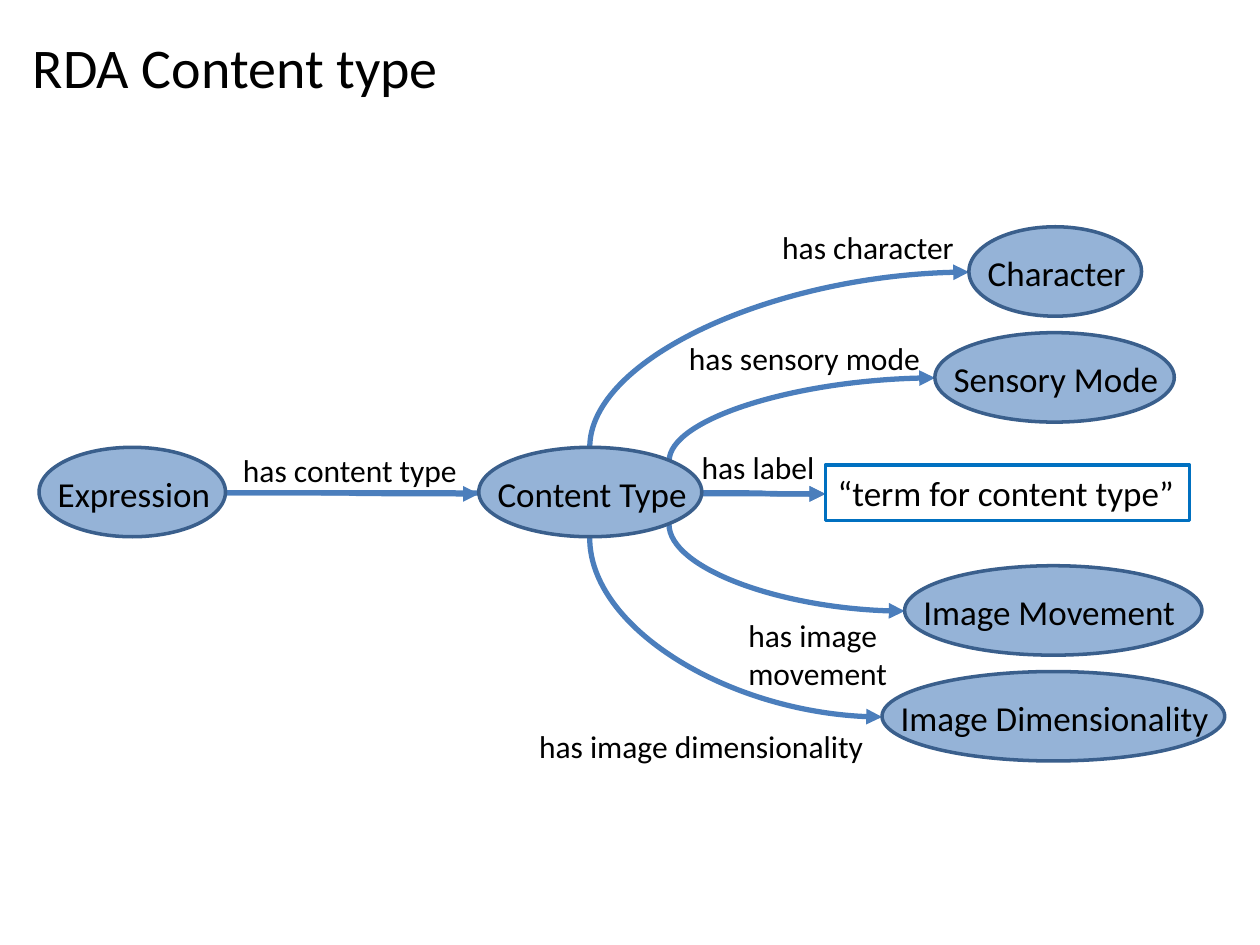
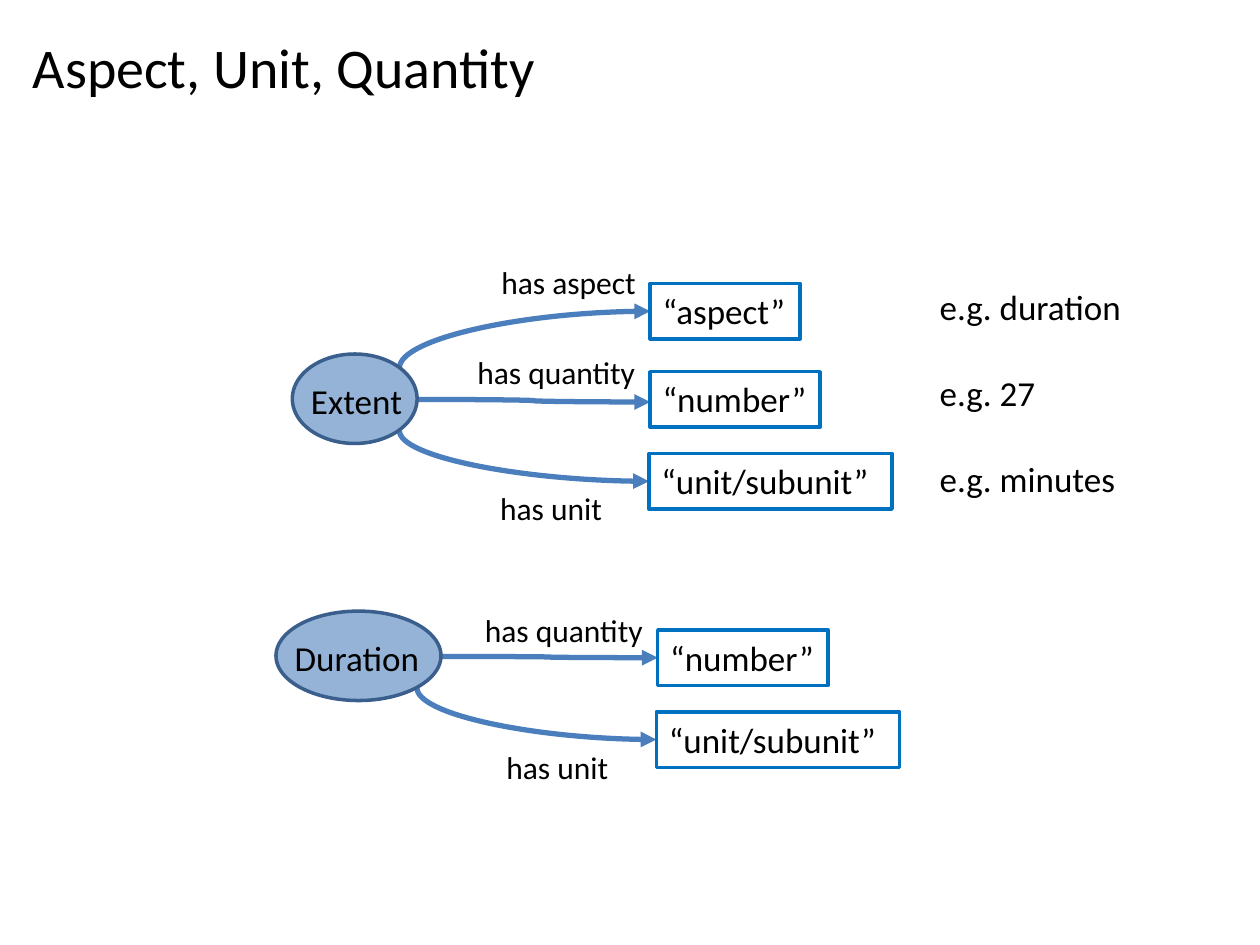
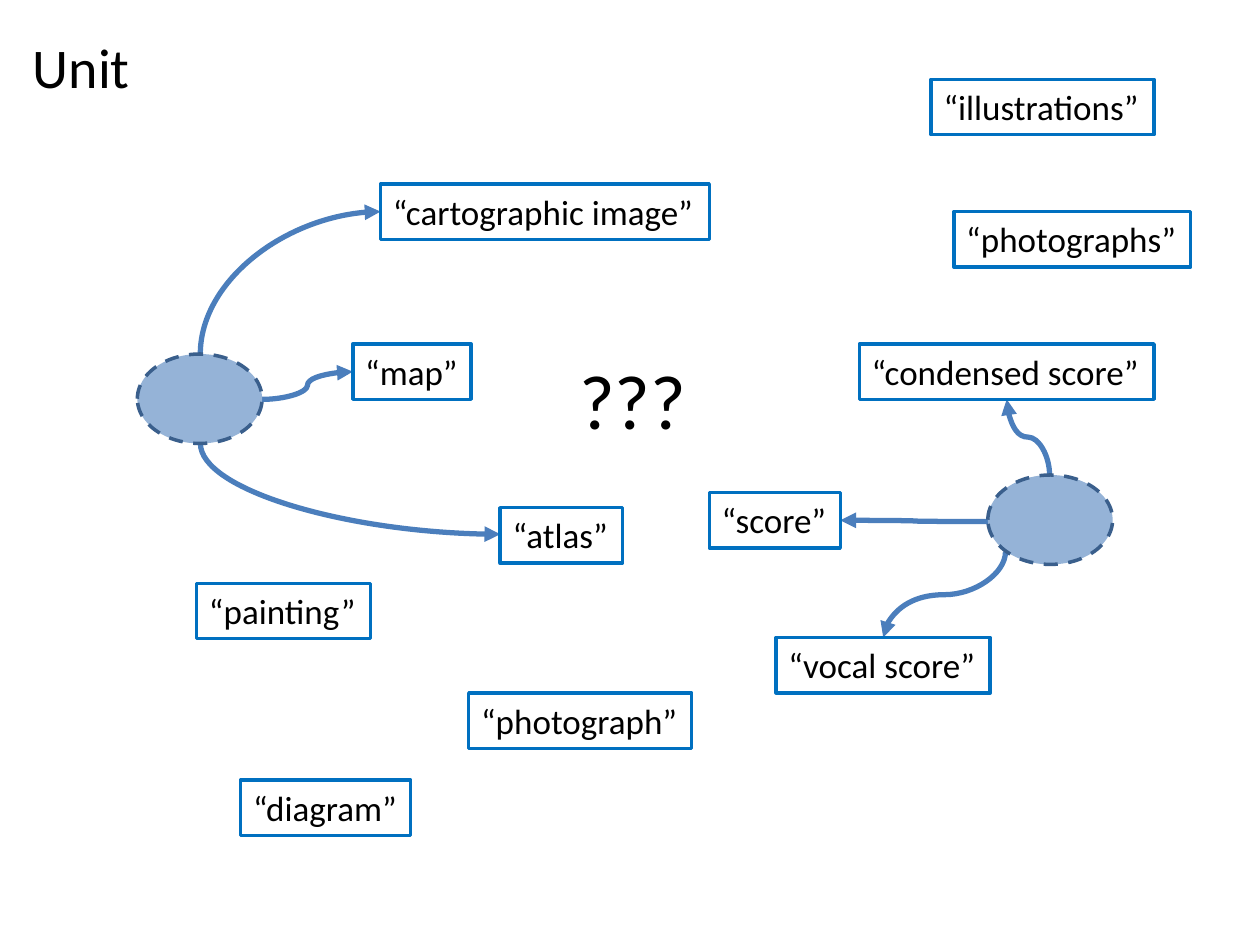
"""Build three slides of entity diagrams on content type, extent and unit."""
import math

import pptx
import pptx.dml.color
import pptx.enum.dml
import pptx.enum.shapes
import pptx.enum.text
import pptx.oxml.ns
import pptx.oxml.xmlchemy
import pptx.util

Inches = pptx.util.Inches
Pt = pptx.util.Pt
qn = pptx.oxml.ns.qn
new_element = pptx.oxml.xmlchemy.OxmlElement
color = pptx.dml.color.RGBColor.from_string

FONT = "Calibri"
BLACK, WHITE = "000000", "FFFFFF"
ELLIPSE_FILL, ELLIPSE_LINE = "95B3D7", "3A5F8C"
TERM_LINE, ARROW_LINE = "0070C0", "4B7EBC"
ELLIPSE_HEIGHT = 0.71
TEXT_HEIGHTS = {18: 0.4, 20: 0.44, 32: 0.64, 44: 0.84}
EXTRA_LINE = 0.31


def set_text(box, text, left, top, width, size):
    """Place a box and fill it with left-aligned, unwrapped text."""
    height = TEXT_HEIGHTS[size] + EXTRA_LINE * text.count("\n")
    box.left, box.top = Inches(left), Inches(top)
    box.width, box.height = Inches(width), Inches(height)
    frame = box.text_frame
    frame.text = text
    frame.word_wrap = False
    frame.auto_size = pptx.enum.text.MSO_AUTO_SIZE.SHAPE_TO_FIT_TEXT
    frame.vertical_anchor = pptx.enum.text.MSO_ANCHOR.TOP
    for para in frame.paragraphs:
        para.alignment = pptx.enum.text.PP_ALIGN.LEFT
        para.font.name = FONT
        para.font.size = Pt(size)
        para.font.color.rgb = color(BLACK)


def add_arrow(page, route, start_x, start_y, end_x, end_y):
    """Draw a curve that leaves sideways (flat) or vertically (upright, bend)."""
    begin, end = (start_x, start_y), (end_x, end_y)
    across, down = end_x - start_x, end_y - start_y
    if route != "flat":
        center_x, center_y = (start_x + end_x) / 2, (start_y + end_y) / 2
        offset_x = math.copysign(down / 2, across)
        offset_y = -math.copysign(across / 2, down)
        begin = (center_x + offset_x, center_y + offset_y)
        end = (center_x - offset_x, center_y - offset_y)
    arrow = page.shapes.add_connector(
        pptx.enum.shapes.MSO_CONNECTOR.CURVE, *map(Inches, begin + end))
    arrow.line.color.rgb = color(ARROW_LINE)
    arrow.line.width = Pt(3)
    properties = arrow._element.spPr
    if route != "flat":
        turn = 270 if across * down > 0 else 90
        properties.find(qn("a:xfrm")).set("rot", str(turn * 60000))
    if route == "bend":
        properties.find(qn("a:prstGeom")).set("prst", "curvedConnector2")
    head = new_element("a:tailEnd")
    head.set("type", "triangle")
    properties.find(qn("a:ln")).append(head)
    properties.append(new_element("a:effectLst"))


slides = [
    {
        "title": ("RDA Content type", 3.45),
        "arrows": [
            ("flat", 1.79, 3.91, 6.55, 3.92),
            ("flat", 1.79, 3.91, 3.8, 3.92),
            ("bend", 5.31, 4.16, 7.18, 4.85),
            ("bend", 4.68, 4.27, 7, 5.69),
            ("bend", 5.31, 3.66, 7.42, 3),
            ("bend", 4.68, 3.55, 7.69, 2.16),
            ("flat", 5.57, 3.91, 6.55, 3.92),
        ],
        "entities": [
            ("Expression", 0.31, 3.55, 1.48, 1.42),
            ("Content Type", 3.8, 3.55, 1.77, 1.71),
            ("Image Dimensionality", 7, 5.33, 2.72, 2.67),
            ("Sensory Mode", 7.42, 2.64, 1.9, 1.84),
            ("Character", 7.69, 1.8, 1.37, 1.31),
            ("Image Movement", 7.18, 4.49, 2.36, 2.22),
        ],
        "terms": [("“term for content type”", 6.55, 3.69, 2.89)],
        "labels": [
            ("has content type", 1.83, 3.53, 1.92, 18),
            ("has character", 6.11, 1.76, 1.58, 18),
            ("has sensory mode", 5.37, 2.64, 2.06, 18),
            ("has image dimensionality", 4.18, 5.72, 2.8, 18),
            ("has image\nmovement", 5.84, 4.84, 1.32, 18),
            ("has label", 5.47, 3.51, 1.11, 18),
        ],
    },
    {
        "title": ("Aspect, Unit, Quantity", 4.24),
        "arrows": [
            ("flat", 3.31, 3.17, 5.16, 3.19),
            ("bend", 3.17, 3.42, 5.15, 3.82),
            ("flat", 3.5, 5.21, 5.22, 5.22),
            ("bend", 3.31, 5.46, 5.21, 5.87),
            ("bend", 3.17, 2.92, 5.16, 2.47),
        ],
        "entities": [
            ("Extent", 2.32, 2.81, 0.99, 0.93),
            ("Duration", 2.19, 4.85, 1.31, 1.2),
        ],
        "terms": [
            ("“number”", 5.16, 2.95, 1.35),
            ("“unit/subunit”", 5.15, 3.6, 1.93),
            ("“number”", 5.22, 5, 1.35),
            ("“unit/subunit”", 5.21, 5.65, 1.93),
            ("“aspect”", 5.16, 2.25, 1.19),
        ],
        "labels": [
            ("has unit", 3.87, 3.83, 1.02, 18),
            ("has quantity", 3.69, 2.75, 1.47, 18),
            ("has unit", 3.92, 5.89, 1.02, 18),
            ("has quantity", 3.75, 4.8, 1.47, 18),
            ("has aspect", 3.88, 2.04, 1.28, 18),
            ("e.g. duration", 7.36, 2.22, 1.65, 20),
            ("e.g. 27", 7.36, 2.9, 0.96, 20),
            ("e.g. minutes", 7.36, 3.58, 1.61, 20),
        ],
    },
    {
        "title": ("Unit", 0.98),
        "arrows": [
            ("bend", 1.59, 2.81, 3.02, 1.68),
            ("flat", 2.08, 3.17, 2.8, 2.95),
            ("bend", 1.59, 3.52, 3.97, 4.24),
            ("upright", 8.33, 3.77, 7.99, 3.17),
            ("upright", 7.98, 4.38, 7.01, 5.06),
            ("flat", 7.84, 4.14, 6.67, 4.13),
        ],
        "entities": [
            ("", 1.09, 2.81, 0.99, 0),
            ("", 7.84, 3.77, 0.99, 0),
        ],
        "terms": [
            ("“diagram”", 1.91, 6.19, 1.35),
            ("“map”", 2.8, 2.73, 0.94),
            ("“cartographic image”", 3.02, 1.46, 2.61),
            ("“atlas”", 3.97, 4.03, 0.97),
            ("“score”", 5.63, 3.91, 1.04),
            ("“vocal score”", 6.16, 5.06, 1.7),
            ("“condensed score”", 6.82, 2.73, 2.34),
            ("“painting”", 1.56, 4.63, 1.38),
            ("“photograph”", 3.72, 5.5, 1.77),
            ("“illustrations”", 7.39, 0.63, 1.77),
            ("“photographs”", 7.57, 1.68, 1.88),
        ],
        "labels": [("???", 4.5, 2.75, 1.06, 44)],
    },
]

deck = pptx.Presentation()
deck.slide_width, deck.slide_height = Inches(10), Inches(7.5)
title_only = deck.slide_layouts[5]

for content in slides:
    page = deck.slides.add_slide(title_only)
    title, title_width = content["title"]
    set_text(page.shapes.title, title, 0.16, 0.21, title_width, 32)

    for arrow in content["arrows"]:
        add_arrow(page, *arrow)

    for name, left, top, width, name_width in content["entities"]:
        shapes = page.shapes.add_group_shape().shapes if name else page.shapes
        ellipse = shapes.add_shape(
            pptx.enum.shapes.MSO_SHAPE.OVAL, Inches(left), Inches(top),
            Inches(width), Inches(ELLIPSE_HEIGHT))
        ellipse.shadow.inherit = False
        ellipse.fill.solid()
        ellipse.fill.fore_color.rgb = color(ELLIPSE_FILL)
        ellipse.line.color.rgb = color(ELLIPSE_LINE)
        ellipse.line.width = Pt(2)
        if name:
            box = shapes.add_textbox(
                ellipse.left, ellipse.top, ellipse.width, ellipse.height)
            set_text(box, name, left + 0.05, top + 0.15, name_width, 20)
        else:
            ellipse.line.dash_style = pptx.enum.dml.MSO_LINE.DASH

    for term, left, top, width in content["terms"]:
        box = page.shapes.add_textbox(0, 0, 0, 0)
        set_text(box, term, left, top, width, 20)
        box.fill.solid()
        box.fill.fore_color.rgb = color(WHITE)
        box.line.color.rgb = color(TERM_LINE)
        box.line.width = Pt(2)

    for label, left, top, width, size in content["labels"]:
        box = page.shapes.add_textbox(0, 0, 0, 0)
        set_text(box, label, left, top, width, size)

deck.save("out.pptx")
